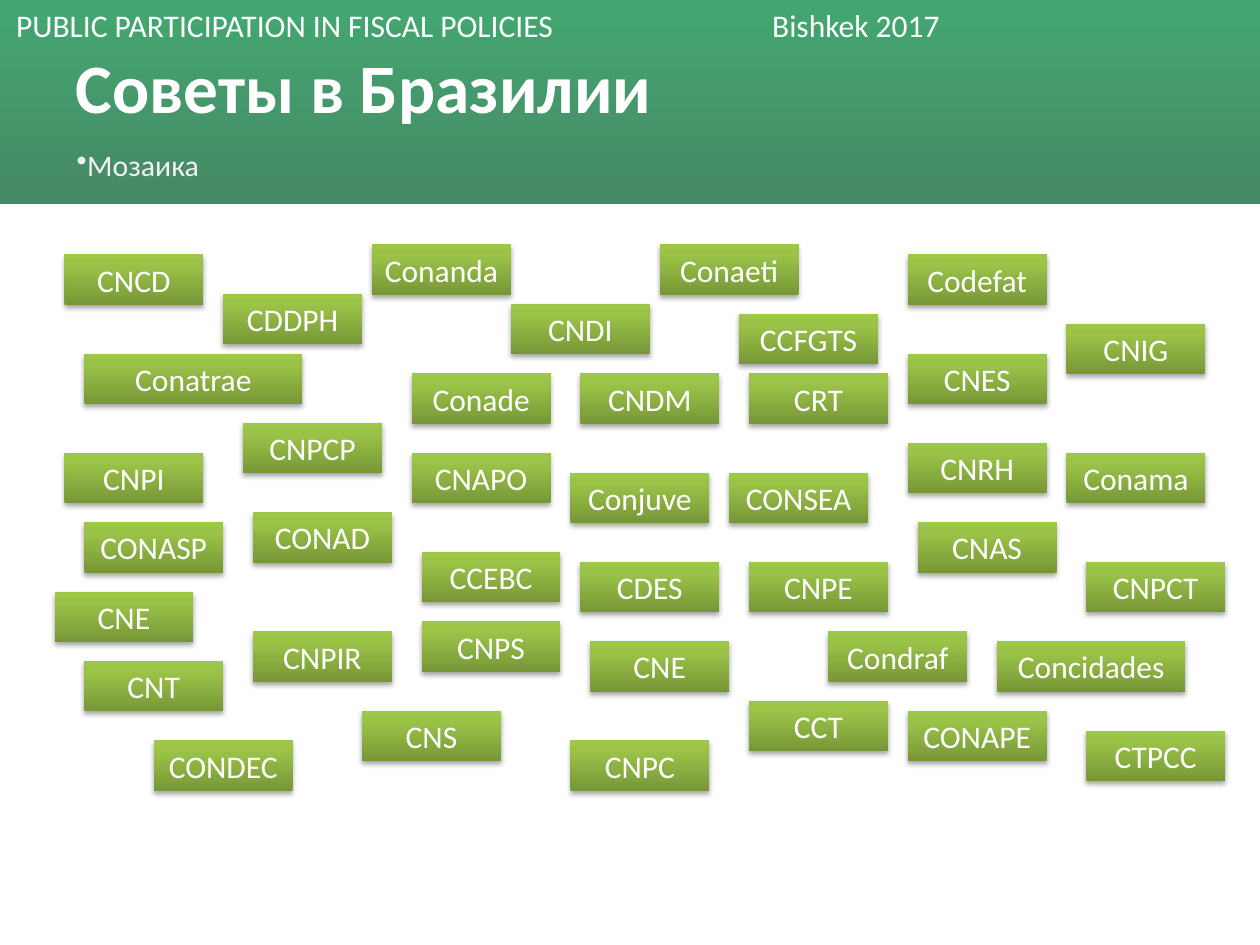
import pptx
import pptx.dml.color
import pptx.enum.shapes
import pptx.enum.text
import pptx.oxml
import pptx.oxml.ns
import pptx.util
from dataclasses import dataclass

# Content
HEADER = "PUBLIC PARTICIPATION IN FISCAL POLICIES\t\t\t\tBishkek 2017"
TITLE = "Советы в Бразилии"
SUBTITLE = "Мозаика"

# Councils by grid row: (name, column) or (name, column, columns wide)
COUNCILS = {
    0: [("Conanda", 32), ("Conaeti", 61)],
    1: [("CNCD", 1), ("Codefat", 86)],
    5: [("CDDPH", 17)],
    6: [("CNDI", 46)],
    7: [("CCFGTS", 69)],
    8: [("CNIG", 102)],
    11: [("Conatrae", 3, 22), ("CNES", 86)],
    13: [("Conade", 36), ("CNDM", 53), ("CRT", 70)],
    18: [("CNPCP", 19)],
    20: [("CNRH", 86)],
    21: [("CNPI", 1), ("CNAPO", 36), ("Conama", 102)],
    23: [("Conjuve", 52), ("CONSEA", 68)],
    27: [("CONAD", 20)],
    28: [("CONASP", 3), ("CNAS", 87)],
    31: [("CCEBC", 37)],
    32: [("CDES", 53), ("CNPE", 70), ("CNPCT", 104)],
    35: [("CNE", 0)],
    38: [("CNPS", 37)],
    39: [("CNPIR", 20), ("Condraf", 78)],
    40: [("CNE", 54), ("Concidades", 95, 19)],
    42: [("CNT", 3)],
    46: [("CCT", 70)],
    47: [("CNS", 31), ("CONAPE", 86)],
    49: [("CTPCC", 104)],
    50: [("CONDEC", 10), ("CNPC", 52)],
}

# Mosaic grid
CELL = pptx.util.Mm(2)
GRID_LEFT = pptx.util.Mm(11)
GRID_TOP = pptx.util.Inches(1.94)
TILE_COLUMNS = 14
TILE_HEIGHT = pptx.util.Inches(0.4)


@dataclass(frozen=True)
class Theme:
    font: str = "Calibri"
    white: str = "FFFFFF"
    soft_white: str = "F2F2F2"
    band: tuple = ((0, "43A771"), (100, "468966"))
    tile: tuple = ((0, "779737"), (80, "9BC348"), (100, "9DC746"))
    body_size: float = 18
    subtitle_size: float = 17
    title_size: float = 39.6


THEME = Theme()
MIDDLE = pptx.enum.text.MSO_ANCHOR.MIDDLE
NAMESPACE = pptx.oxml.ns.nsdecls("a")


def write_text(shape, text, size=THEME.body_size, color=THEME.white, bold=False,
               align=pptx.enum.text.PP_ALIGN.LEFT,
               anchor=pptx.enum.text.MSO_ANCHOR.TOP, bullet=None):
    frame = shape.text_frame
    frame.word_wrap = True
    frame.vertical_anchor = anchor
    paragraph = frame.paragraphs[0]
    paragraph.alignment = align
    run = paragraph.add_run()
    run.text = text
    run.font.name = THEME.font
    run.font.size = pptx.util.Pt(size)
    run.font.bold = bold
    run.font.color.rgb = pptx.dml.color.RGBColor.from_string(color)
    if bullet:
        paragraph.space_before = pptx.util.Pt(size * 0.2)
        paragraph._p.get_or_add_pPr().append(
            pptx.oxml.parse_xml(f'<a:buChar {NAMESPACE} char="{bullet}"/>'))


def add_text_box(slide, text, left, top, width, height, **text_format):
    box = slide.shapes.add_textbox(*map(pptx.util.Inches, (left, top, width, height)))
    write_text(box, text, **text_format)


def add_gradient_rectangle(slide, left, top, width, height, stops, angle):
    shape = slide.shapes.add_shape(
        pptx.enum.shapes.MSO_SHAPE.RECTANGLE, left, top, width, height)
    shape.shadow.inherit = False
    shape.line.fill.background()
    stop_xml = "".join(
        f'<a:gs pos="{position * 1000}"><a:srgbClr val="{color}"/></a:gs>'
        for position, color in stops)
    shape._element.spPr.find(pptx.oxml.ns.qn("a:prstGeom")).addnext(
        pptx.oxml.parse_xml(
            f'<a:gradFill {NAMESPACE} rotWithShape="1"><a:gsLst>{stop_xml}</a:gsLst>'
            f'<a:lin ang="{angle * 60000}" scaled="0"/></a:gradFill>'))
    return shape


def add_drop_shadow(shape):
    blur, distance = pptx.util.Pt(3.1), pptx.util.Pt(1.8)
    shape._element.spPr.find(pptx.oxml.ns.qn("a:effectLst")).append(
        pptx.oxml.parse_xml(
            f'<a:outerShdw {NAMESPACE} blurRad="{blur}" dist="{distance}" '
            'dir="5400000" rotWithShape="0"><a:srgbClr val="000000">'
            '<a:alpha val="35000"/></a:srgbClr></a:outerShdw>'))


def add_tile(slide, name, row, column, columns=TILE_COLUMNS):
    tile = add_gradient_rectangle(
        slide, GRID_LEFT + column * CELL, GRID_TOP + row * CELL,
        columns * CELL, TILE_HEIGHT, THEME.tile, 270)
    add_drop_shadow(tile)
    write_text(tile, name, align=pptx.enum.text.PP_ALIGN.CENTER)


def main():
    presentation = pptx.Presentation()
    presentation.slide_width = pptx.util.Inches(10)
    presentation.slide_height = pptx.util.Inches(7.5)
    slide = presentation.slides.add_slide(presentation.slide_layouts[6])

    # Header band
    add_gradient_rectangle(slide, 0, 0, presentation.slide_width,
                           pptx.util.Inches(1.62), THEME.band, 90)
    add_text_box(slide, HEADER, 0.03, 0, 9.78, 0.4)
    add_text_box(slide, SUBTITLE, 0.51, 1.07, 8.98, 0.47, size=THEME.subtitle_size,
                 color=THEME.soft_white, anchor=MIDDLE, bullet="•")
    add_text_box(slide, TITLE, 0.5, 0.3, 9, 0.77, size=THEME.title_size,
                 bold=True, anchor=MIDDLE)

    # Mosaic of councils
    for row, councils in COUNCILS.items():
        for name, *place in councils:
            add_tile(slide, name, row, *place)

    presentation.save("out.pptx")


if __name__ == "__main__":
    main()
